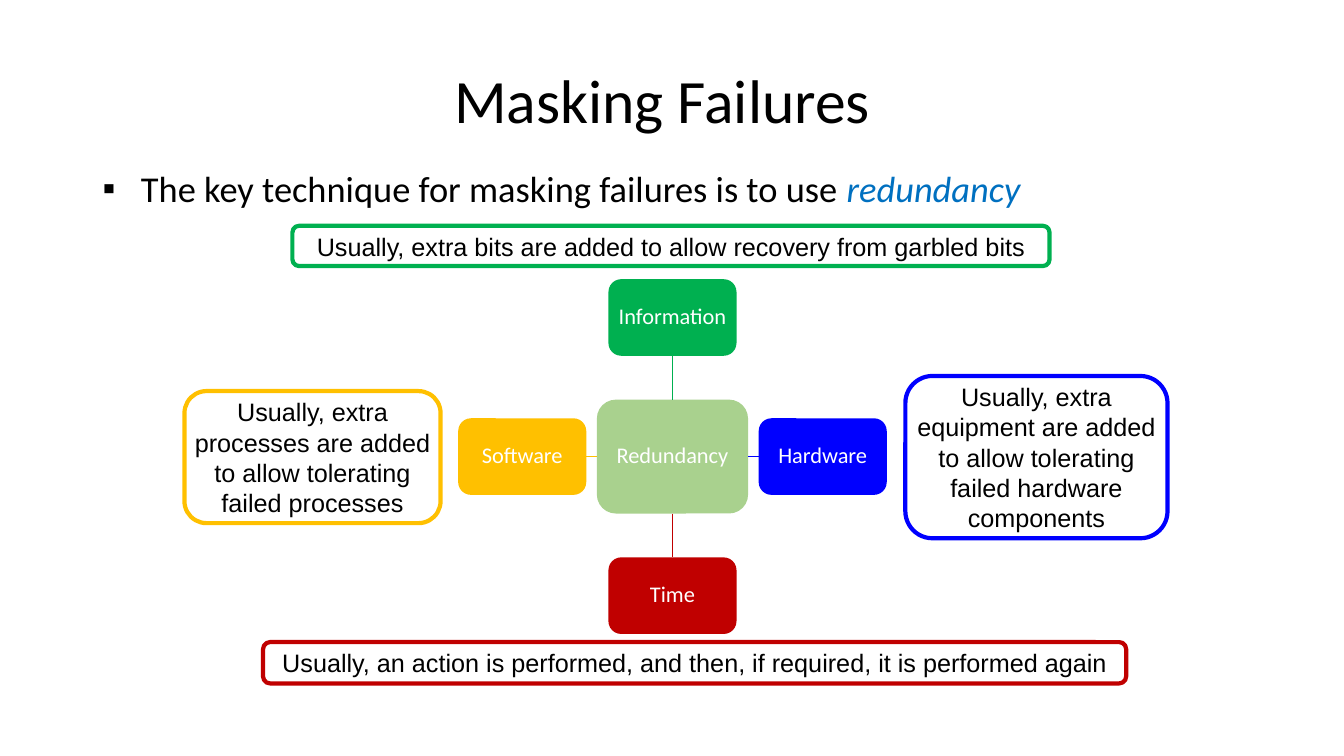
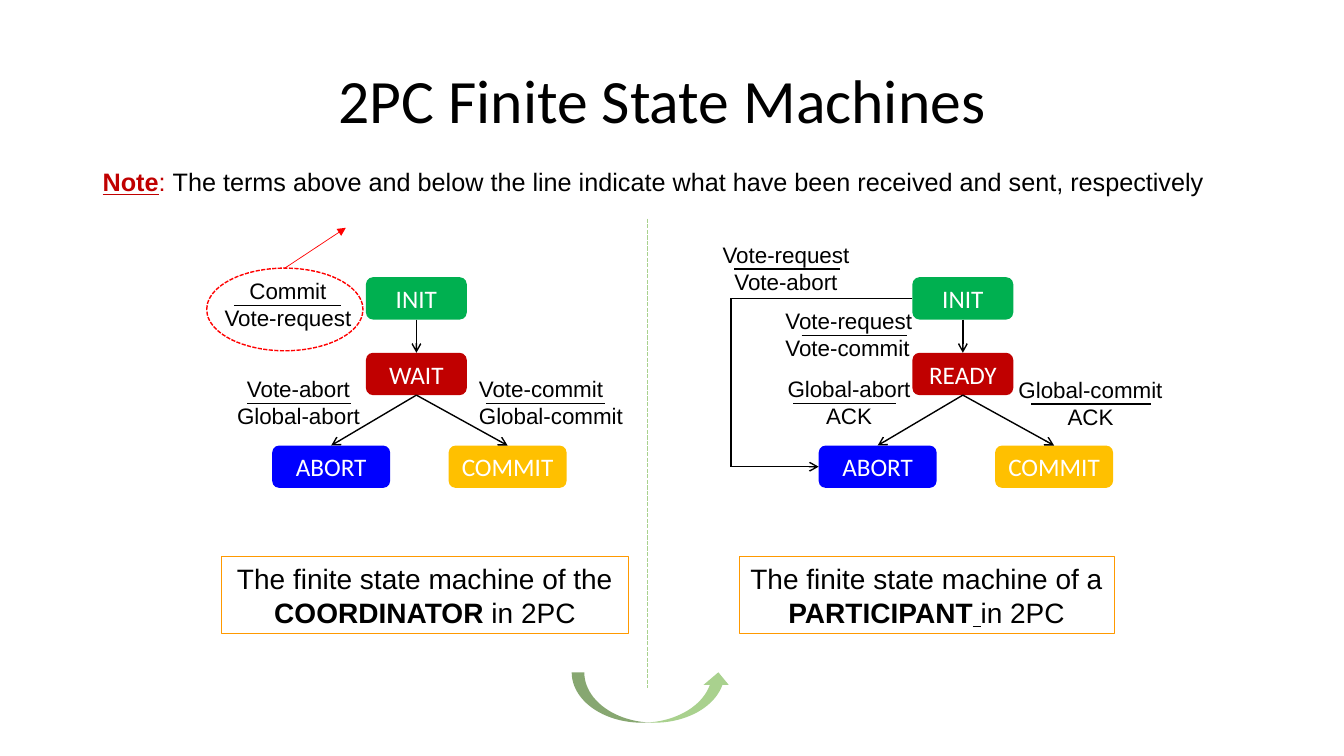
"""Build two slides: masking failures by redundancy, and the 2PC state machines."""
from lxml import etree
from pptx import Presentation
from pptx.dml.color import RGBColor
from pptx.enum.dml import MSO_LINE
from pptx.enum.shapes import MSO_CONNECTOR, MSO_SHAPE
from pptx.enum.text import MSO_ANCHOR, PP_ALIGN
from pptx.oxml.ns import qn
from pptx.util import Inches, Pt

RECT, ROUND = MSO_SHAPE.RECTANGLE, MSO_SHAPE.ROUNDED_RECTANGLE
OVAL, CURVED_ARROW = MSO_SHAPE.OVAL, MSO_SHAPE.CURVED_UP_ARROW
STRAIGHT = MSO_CONNECTOR.STRAIGHT
DASH = MSO_LINE.SQUARE_DOT
LEFT, CENTER, JUSTIFY = PP_ALIGN.LEFT, PP_ALIGN.CENTER, PP_ALIGN.JUSTIFY
TOP, MIDDLE = MSO_ANCHOR.TOP, MSO_ANCHOR.MIDDLE
TOP_SIDE, LEFT_SIDE, BOTTOM_SIDE, RIGHT_SIDE = range(4)


class Theme:
    black, white = "000000", "FFFFFF"
    green, red, blue, amber = "00B050", "C00000", "0000FF", "FFC000"
    sage, accent, frame, callout = "A9D18E", "0070C0", "FF9900", "FF0000"
    title = {"size": 44, "name": "Calibri", "color": black}
    bullet = {"size": 26, "name": "Calibri", "color": black}
    node = {"size": 16, "name": "Calibri", "color": white}
    state = {"size": 18, "name": "Calibri", "color": white}
    note = {"size": 18, "name": "Arial", "color": black}
    label = {"size": 16, "name": "Arial", "color": black}
    caption = {"size": 20, "name": "Arial", "color": black}


TITLE_AT = (0.92, 0.3, 11.3, 1.45)
SLIDE_TITLES = ["Masking Failures", "2PC Finite State Machines"]

KEY_POINT = [("The key technique for masking failures is to use ", {}),
             ("redundancy", {"color": Theme.accent, "italic": True})]
HUB = ("Redundancy", (6.67, 4.53), (1.5, 1.13))
SPOKE_SIZE, SPOKE_REACH = (1.27, 0.76), (1.49, 1.38)
SPOKES = [
    ("Information", Theme.green, (0, -1), TOP_SIDE, BOTTOM_SIDE,
     (2.9, 2.24, 7.51, 0.4),
     "Usually, extra bits are added to allow recovery from garbled bits"),
    ("Hardware", Theme.blue, (1, 0), RIGHT_SIDE, LEFT_SIDE,
     (8.98, 3.73, 2.6, 1.61),
     "Usually, extra equipment are added to allow tolerating failed hardware components"),
    ("Time", Theme.red, (0, 1), BOTTOM_SIDE, TOP_SIDE,
     (2.61, 6.37, 8.56, 0.41),
     "Usually, an action is performed, and then, if required, it is performed again"),
    ("Software", Theme.amber, (-1, 0), LEFT_SIDE, RIGHT_SIDE,
     (1.83, 3.88, 2.54, 1.31),
     "Usually, extra processes are added to allow tolerating failed processes"),
]

NOTE = [("Note", {"color": Theme.red, "bold": True, "underline": True}),
        (": ", {"color": Theme.red}),
        ("The terms above and below the line indicate what have been "
         "received and sent, respectively", {})]
STATES = [(0.93, 2.75, 1.0, Theme.green), (0.93, 3.5, 1.0, Theme.red),
          (0, 4.42, 1.17, Theme.blue), (1.75, 4.42, 1.17, Theme.amber)]
STATE_H = 0.42
TRANSITIONS = [(0, 1), (1, 2), (1, 3)]
MACHINES = [
    {"left": 2.7, "states": ["INIT", "WAIT", "ABORT", "COMMIT"],
     "labels": [("Commit", "Vote-request", (2.22, 2.7, 1.37), (2.32, 3.38), CENTER),
                ("Vote-abort", "Global-abort", (2.34, 3.67, 1.34), (2.45, 3.48), CENTER),
                ("Vote-commit", "Global-commit", (4.75, 3.67, 1.55), (4.82, 6), LEFT)],
     "caption_at": (2.2, 5.52, 4.03, 0.77),
     "caption": [[("The finite state machine of the", {})],
                 [("COORDINATOR", {"bold": True}), (" in 2PC", {})]]},
    {"left": 8.12, "states": ["INIT", "READY", "ABORT", "COMMIT"],
     "labels": [("Vote-request", "Vote-commit", (7.79, 3, 1.37), (7.95, 9), LEFT),
                ("Global-abort", "ACK", (7.8, 3.67, 1.34), (7.87, 8.89), CENTER),
                ("Global-commit", "ACK", (10.09, 3.68, 1.55), (10.23, 11.42), CENTER),
                ("Vote-request", "Vote-abort", (7.16, 2.34, 1.37), (7.28, 8.33), CENTER)],
     "caption_at": (7.33, 5.52, 3.72, 0.77),
     "caption": [[("The finite state machine of a", {})],
                 [("PARTICIPANT", {"bold": True}),
                  (" ", {"italic": True, "underline": True}), ("in 2PC", {})]]},
]
LOOP_X = 7.25


def rgb(value):
    return RGBColor.from_string(value)


def write(sp, paras, fmt, align=CENTER, anchor=MIDDLE, ins=(0, 0, 0, 0),
          wrap=True, spacing=None):
    tf = sp.text_frame
    sides = ("margin_left", "margin_top", "margin_right", "margin_bottom")
    frame = dict(zip(sides, map(Inches, ins)))
    frame.update(word_wrap=wrap, vertical_anchor=anchor)
    for key, value in frame.items():
        setattr(tf, key, value)
    for i, runs in enumerate(paras):
        p = tf.paragraphs[0] if i == 0 else tf.add_paragraph()
        p.alignment, p.line_spacing = align, spacing
        for text, extra in [(runs, {})] if isinstance(runs, str) else runs:
            r = p.add_run()
            r.text = text
            for key, value in {**fmt, **extra}.items():
                if key == "color":
                    r.font.color.rgb = rgb(value)
                else:
                    setattr(r.font, key, Pt(value) if key == "size" else value)
    return tf


def add_text(s, at, paras, fmt, **layout):
    return write(s.shapes.add_textbox(*map(Inches, at)), paras, fmt, **layout)


def style_line(line, color, width, dash=None):
    line.color.rgb = rgb(color)
    line.width = Pt(width)
    if dash:
        line.dash_style = dash


def add_box(s, kind, at, fill=None, outline=None):
    sp = s.shapes.add_shape(kind, *map(Inches, at))
    sp.shadow.inherit = False
    if fill:
        sp.fill.solid()
        sp.fill.fore_color.rgb = rgb(fill)
    else:
        sp.fill.background()
    if outline:
        style_line(sp.line, *outline)
    else:
        sp.line.fill.background()
    return sp


def add_line(s, start, end, color=Theme.black, width=1, dash=None, head=None):
    """Draw a line between points (x, y) or joints (shape, side)."""
    joints = [hasattr(spot[0], "shape_id") for spot in (start, end)]
    points = [(0, 0) if joint else tuple(map(Inches, spot))
              for joint, spot in zip(joints, (start, end))]
    line = s.shapes.add_connector(STRAIGHT, *points[0], *points[1])
    if joints[0]:
        line.begin_connect(*start)
    if joints[1]:
        line.end_connect(*end)
    style_line(line.line, color, width, dash)
    if head:
        etree.SubElement(line.line._get_or_add_ln(), qn("a:tailEnd"), type=head)
    etree.SubElement(line._element.spPr, qn("a:effectLst"))


def add_slide(prs, title):
    s = prs.slides.add_slide(prs.slide_layouts[6])
    add_text(s, TITLE_AT, [title], Theme.title, spacing=0.9, ins=(0.1, 0.05, 0.1, 0.05))
    return s


def add_node(s, text, center, size, fill):
    corner = [c - d / 2 for c, d in zip(center, size)]
    sp = add_box(s, ROUND, (*corner, *size), fill)
    write(sp, [text], Theme.node, ins=(0.04,) * 4, spacing=0.9)
    return sp


def build_redundancy(s):
    tf = add_text(s, (0.92, 1.6, 11.3, 0.6), [KEY_POINT], Theme.bullet,
                  align=JUSTIFY, anchor=TOP, ins=(0.1, 0.05, 0.1, 0.05))
    pPr = tf.paragraphs[0]._p.get_or_add_pPr()
    pPr.set("marL", str(Inches(0.38)))
    pPr.set("indent", str(Inches(-0.38)))
    etree.SubElement(pPr, qn("a:buFont"), typeface="Arial")
    etree.SubElement(pPr, qn("a:buChar"), char="▪")

    hub = add_node(s, *HUB, Theme.sage)
    for name, color, way, hub_side, spoke_side, note_at, note in SPOKES:
        center = [c + w * d for c, w, d in zip(HUB[1], way, SPOKE_REACH)]
        spoke = add_node(s, name, center, SPOKE_SIZE, color)
        add_line(s, (hub, hub_side), (spoke, spoke_side), color)
        write(add_box(s, ROUND, note_at, outline=(color, 3)), [note], Theme.note)


def build_machine(s, machine):
    states = []
    for name, (dx, y, w, color) in zip(machine["states"], STATES):
        sp = add_box(s, ROUND, (machine["left"] + dx, y, w, STATE_H), color)
        write(sp, [name], Theme.state)
        states.append(sp)
    for a, b in TRANSITIONS:
        add_line(s, (states[a], BOTTOM_SIDE), (states[b], TOP_SIDE), head="arrow")
    for received, sent, (x, y, w), (x1, x2), align in machine["labels"]:
        add_text(s, (x, y, w, 0.64), [received, sent], Theme.label, align=align,
                 anchor=TOP, ins=(0, 0.05, 0.1, 0.05), wrap=False)
        add_line(s, (x1, y + 0.33), (x2, y + 0.33))
    frame = add_box(s, RECT, machine["caption_at"], outline=(Theme.frame, 0.75))
    write(frame, machine["caption"], Theme.caption, wrap=False)
    return states


def build_state_machines(s):
    add_text(s, (0.92, 1.6, 11.22, 0.4), [NOTE], Theme.note, align=LEFT,
             anchor=TOP, ins=(0.1, 0.05, 0.1, 0.05), wrap=False)
    init, _, abort, _ = [build_machine(s, m) for m in MACHINES][1]
    top, bottom = (LOOP_X, STATES[0][1] + STATE_H / 2), (LOOP_X, STATES[2][1] + STATE_H / 2)
    add_line(s, (init, LEFT_SIDE), top)
    add_line(s, top, bottom)
    add_line(s, bottom, (abort, LEFT_SIDE), head="arrow")
    add_line(s, (6.42, 2.17), (6.42, 6.83), Theme.sage, dash=DASH)
    add_box(s, CURVED_ARROW, (5.67, 6.67, 1.58, 0.5), Theme.sage)
    ring = add_box(s, OVAL, (2.05, 2.66, 1.55, 0.82), outline=(Theme.callout, 1, DASH))
    add_line(s, (ring, TOP_SIDE), (3.43, 2.26), Theme.callout, 0.5, head="triangle")


def main():
    prs = Presentation()
    prs.slide_width, prs.slide_height = Inches(13.33), Inches(7.5)
    for title, build in zip(SLIDE_TITLES, (build_redundancy, build_state_machines)):
        build(add_slide(prs, title))
    prs.save("out.pptx")


if __name__ == "__main__":
    main()
